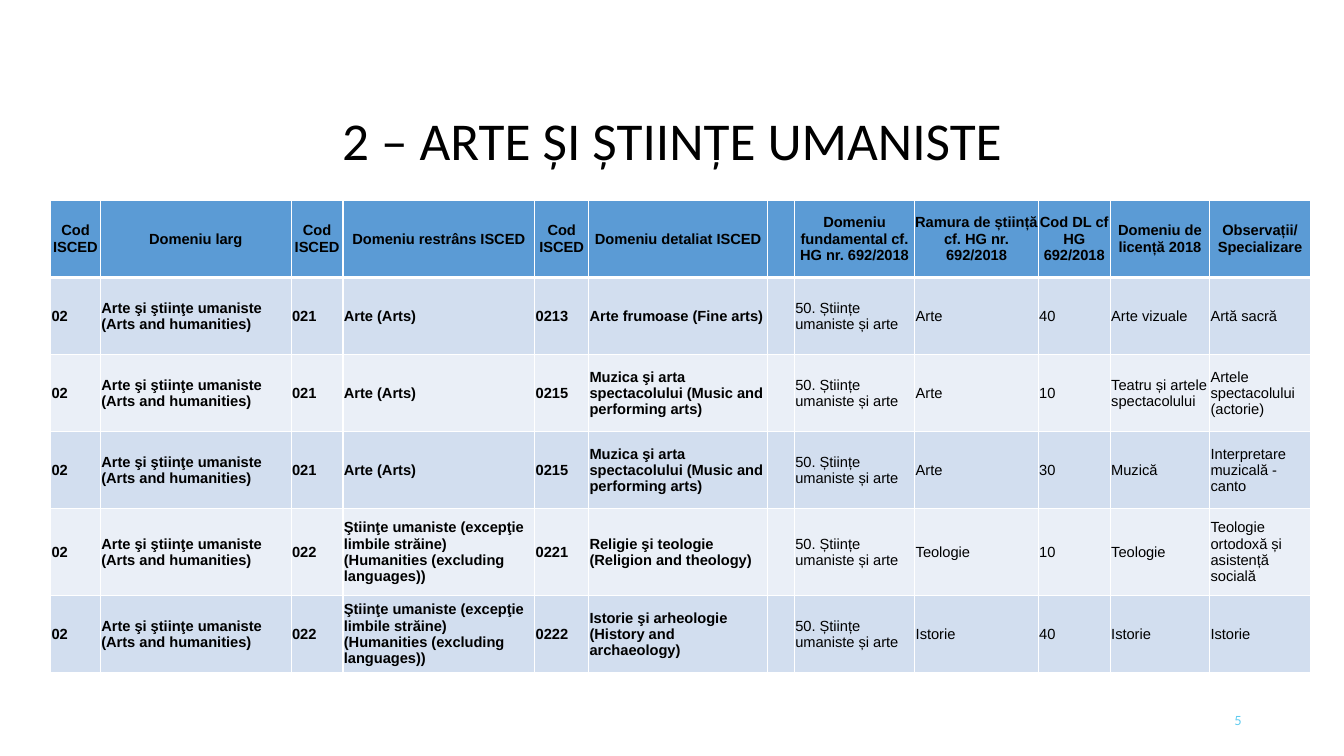
from dataclasses import dataclass

from lxml.etree import SubElement
from pptx import Presentation
from pptx.dml.color import RGBColor
from pptx.enum.text import MSO_ANCHOR as Anchor, MSO_AUTO_SIZE as AutoSize, PP_ALIGN as Align
from pptx.oxml.ns import qn
from pptx.util import Pt

TITLE = "2 – ARTE ȘI ȘTIINȚE UMANISTE"
PAGE_NUMBER = "5"

HEADINGS = [
    "Cod ISCED", "Domeniu larg", "Cod ISCED", "Domeniu restrâns ISCED",
    "Cod ISCED", "Domeniu detaliat ISCED", "",
    "Domeniu fundamental cf. HG nr. 692/2018", "Ramura de știință cf. HG nr. 692/2018",
    "Cod DL cf HG 692/2018", "Domeniu de licență 2018", "Observații/ Specializare",
]
BROAD = ("02", "Arte şi ştiinţe umaniste (Arts and humanities)")
ARTS = ("021", "Arte (Arts)")
HUMANITIES = ("022", "Ştiinţe umaniste (excepţie limbile străine) "
                     "(Humanities (excluding languages))")
PERFORMING = ("0215", "Muzica şi arta spectacolului (Music and performing arts)")
FUNDAMENTAL = "50. Științe umaniste și arte"

# narrow field, detailed field, (branch, code, degree field, specialisation)
PROGRAMMES = [
    (ARTS, ("0213", "Arte frumoase (Fine arts)"),
     ("Arte", "40", "Arte vizuale", "Artă sacră")),
    (ARTS, PERFORMING,
     ("Arte", "10", "Teatru și artele spectacolului", "Artele spectacolului (actorie)")),
    (ARTS, PERFORMING,
     ("Arte", "30", "Muzică", "Interpretare muzicală - canto")),
    (HUMANITIES, ("0221", "Religie şi teologie (Religion and theology)"),
     ("Teologie", "10", "Teologie", "Teologie ortodoxă și asistență socială")),
    (HUMANITIES, ("0222", "Istorie şi arheologie (History and archaeology)"),
     ("Istorie", "40", "Istorie", "Istorie")),
]

COLUMN_WIDTHS = [35.5, 136.3, 37, 137, 38.5, 128, 19, 86, 88.2, 51.5, 71, 72]
ROW_HEIGHTS = [55, 55, 55, 55, 62, 55]
BOLD_COLUMNS = 6


@dataclass(frozen=True)
class Theme:
    ink: str = "000000"
    border: str = "FFFFFF"
    header: str = "5B9BD5"
    bands: tuple = ("D2DEEF", "EAEFF7")
    number: str = "5FCBEF"
    title_size: float = 38
    table_size: float = 10.5
    number_size: float = 9


THEME = Theme()


def style_font(paragraph, face, size, color, bold=False):
    font = paragraph.font
    font.name, font.size, font.bold = face, Pt(size), bold
    font.color.rgb = RGBColor.from_string(color)


def add_borders(cell, top, bottom):
    """Line all four sides; call before the cell is filled, as lines come first."""
    properties = cell._tc.get_or_add_tcPr()
    for side, width in (("L", 1), ("R", 1), ("T", top), ("B", bottom)):
        line = SubElement(properties, qn(f"a:ln{side}"), w=str(Pt(width)))
        fill = SubElement(line, qn("a:solidFill"))
        SubElement(fill, qn("a:srgbClr"), val=THEME.border)


def fill_cell(cell, text, row, column):
    is_header = row == 0
    add_borders(cell, top=3 if row == 1 else 1, bottom=3 if is_header else 1)
    cell.fill.solid()
    cell.fill.fore_color.rgb = RGBColor.from_string(
        THEME.header if is_header else THEME.bands[(row - 1) % 2])
    inset = Pt(0 if is_header else 0.7)
    cell.margin_left = cell.margin_right = cell.margin_top = inset
    cell.margin_bottom = 0
    cell.vertical_anchor = Anchor.MIDDLE
    cell.text = text
    paragraph = cell.text_frame.paragraphs[0]
    paragraph.alignment = Align.CENTER if is_header else Align.LEFT
    style_font(paragraph, "Arial", THEME.table_size, THEME.ink,
               bold=is_header or column < BOLD_COLUMNS)


def add_programme_table(slide):
    rows = [HEADINGS] + [
        [*BROAD, *narrow, *detailed, "", FUNDAMENTAL, *degree]
        for narrow, detailed, degree in PROGRAMMES
    ]
    table = slide.shapes.add_table(
        len(rows), len(HEADINGS), Pt(36.2), Pt(143.2),
        Pt(sum(COLUMN_WIDTHS)), Pt(sum(ROW_HEIGHTS))).table
    for column, width in zip(table.columns, COLUMN_WIDTHS):
        column.width = Pt(width)
    for table_row, height in zip(table.rows, ROW_HEIGHTS):
        table_row.height = Pt(height)
    for row, texts in enumerate(rows):
        for column, text in enumerate(texts):
            fill_cell(table.cell(row, column), text, row, column)


def set_title(slide):
    title = slide.shapes.title
    title.left, title.top, title.width, title.height = Pt(66.2), Pt(76.3), Pt(828), Pt(52)
    frame = title.text_frame
    frame.text = TITLE
    frame.auto_size = AutoSize.NONE
    frame.vertical_anchor = Anchor.MIDDLE
    paragraph = frame.paragraphs[0]
    paragraph.alignment = Align.CENTER
    paragraph.line_spacing = 0.9
    style_font(paragraph, "Calibri", THEME.title_size, THEME.ink)


def add_page_number(slide):
    frame = slide.shapes.add_textbox(Pt(678), Pt(500.5), Pt(216), Pt(28.8)).text_frame
    frame.word_wrap = True
    frame.vertical_anchor = Anchor.MIDDLE
    frame.text = PAGE_NUMBER
    paragraph = frame.paragraphs[0]
    paragraph.alignment = Align.RIGHT
    style_font(paragraph, "Lato", THEME.number_size, THEME.number)


def main():
    deck = Presentation()
    deck.slide_width, deck.slide_height = Pt(960), Pt(540)
    slide = deck.slides.add_slide(deck.slide_layouts[5])
    set_title(slide)
    add_programme_table(slide)
    add_page_number(slide)
    deck.save("out.pptx")


if __name__ == "__main__":
    main()
